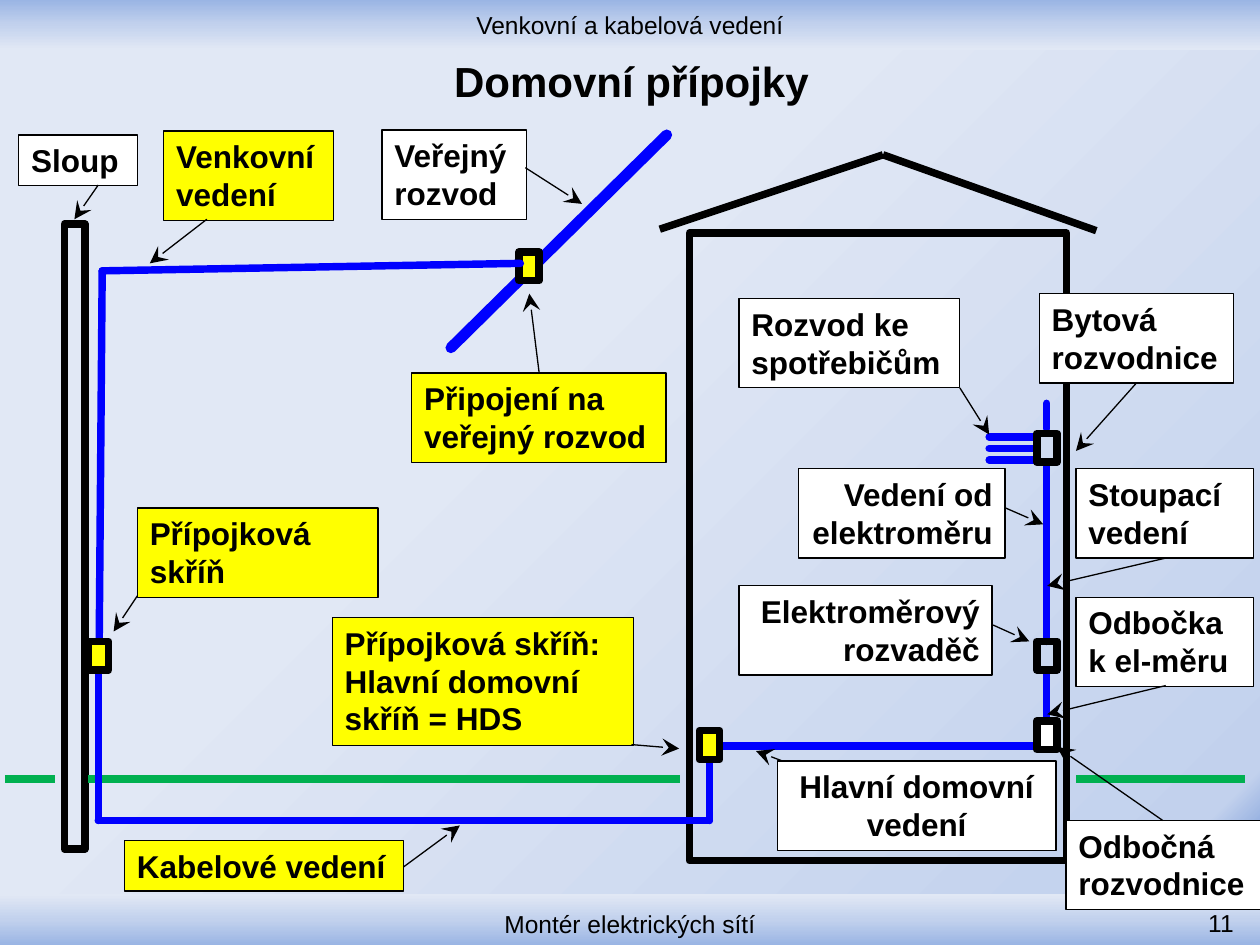
import pptx
import pptx.util
import pptx.oxml
import pptx.oxml.ns
from pptx.dml.color import RGBColor
from pptx.enum.shapes import MSO_CONNECTOR, MSO_SHAPE
from pptx.enum.text import MSO_ANCHOR, MSO_AUTO_SIZE, PP_ALIGN
from pptx.util import Cm, Pt

BLACK = RGBColor(0x00, 0x00, 0x00)
WHITE = RGBColor(0xFF, 0xFF, 0xFF)
YELLOW = RGBColor(0xFF, 0xFF, 0x00)
BLUE = RGBColor(0x00, 0x00, 0xFF)
GREEN = RGBColor(0x00, 0xB0, 0x50)
SKY_DARK = RGBColor(0x34, 0x68, 0xC5)
SKY = RGBColor(0x9A, 0xB5, 0xE4)
SKY_LIGHT = RGBColor(0xC2, 0xD1, 0xED)
SKY_PALE = RGBColor(0xE1, 0xE8, 0xF5)

LEFT, CENTER, RIGHT = PP_ALIGN.LEFT, PP_ALIGN.CENTER, PP_ALIGN.RIGHT

# Text, left, top, width, lines, fill, alignment, arrow from, arrow to (cm)
LABELS = [
    ("Přípojková skříň", 2.77, 10.24, 4.85, 2, YELLOW, LEFT, (2.77, 12.01), (2.29, 12.73)),
    ("Přípojková skříň: Hlavní domovní skříň = HDS", 6.7, 12.45, 6.07, 3, YELLOW, LEFT,
     (12.73, 15.01), (13.69, 15.09)),
    ("Venkovní vedení", 3.3, 2.64, 3.43, 2, YELLOW, LEFT, (4.17, 4.42), (3.02, 5.31)),
    ("Sloup", 0.38, 2.72, 2.39, 1, WHITE, LEFT, (1.98, 3.73), (1.5, 4.42)),
    ("Elektroměrový rozvaděč", 14.9, 11.81, 5.1, 2, WHITE, RIGHT, (20.02, 12.6), (20.75, 12.93)),
    ("Rozvod ke spotřebičům", 14.9, 6.02, 4.45, 2, WHITE, LEFT, (19.35, 7.82), (19.94, 8.76)),
    ("Hlavní domovní vedení", 15.67, 15.34, 5.62, 2, WHITE, CENTER,
     (15.77, 15.34), (15.24, 15.14)),
    ("Bytová rozvodnice", 20.95, 5.92, 3.92, 2, WHITE, LEFT, (22.91, 7.72), (21.69, 9.09)),
    ("Kabelové vedení", 2.51, 16.94, 5.62, 1, YELLOW, LEFT, (8.13, 17.48), (9.27, 16.64)),
    ("Vedení od elektroměru", 16.1, 9.45, 4.16, 2, WHITE, RIGHT, (20.27, 10.24), (21.03, 10.57)),
    ("Veřejný\nrozvod", 7.7, 2.62, 2.92, 2, WHITE, LEFT, (10.59, 3.38), (11.73, 4.11)),
    ("Stoupací vedení", 21.69, 9.45, 3.58, 2, WHITE, LEFT, (23.5, 11.25), (21.11, 11.81)),
    ("Odbočka k el-měru", 21.69, 12.04, 3.58, 2, WHITE, LEFT, (23.5, 13.82), (21.11, 14.4)),
    ("Odbočná rozvodnice", 21.49, 16.54, 3.92, 2, WHITE, LEFT, (23.44, 16.54), (21.31, 15.06)),
    ("Připojení na veřejný rozvod", 8.3, 7.52, 5.13, 2, YELLOW, LEFT,
     (10.87, 7.52), (10.67, 5.92)),
]

# Cable runs, each from one point to the next
CABLES = [
    [(1.98, 13.51), (1.98, 16.54), (14.3, 16.54), (14.3, 15.32)],  # underground cable
    [(14.5, 15.04), (21.1, 15.04), (21.1, 13.51)],                 # main house line
    [(2.06, 5.46), (2, 12.93)],                                    # down the pole
    [(21.1, 9.32), (21.1, 12.93)],                                 # riser
    [(21.1, 8.64), (21.1, 8.13)],
]

# Junction boxes: left, top, fill
BOXES = [
    (1.78, 12.93, YELLOW), (14.1, 14.73, YELLOW), (20.9, 12.93, None),
    (20.9, 8.74, None), (20.9, 14.53, WHITE), (10.46, 5.08, YELLOW),
]


def gradient(parent, stops, direction):
    """Replace the empty fill of parent by a gradient of (position, colour, alpha)."""
    gs = "".join(
        f'<a:gs pos="{pos * 1000}"><a:srgbClr val="{color}">'
        f'<a:alpha val="{alpha * 1000}"/></a:srgbClr></a:gs>'
        for pos, color, alpha in stops)
    fill = pptx.oxml.parse_xml(
        f'<a:gradFill {pptx.oxml.ns.nsdecls("a")} rotWithShape="1">'
        f'<a:gsLst>{gs}</a:gsLst>{direction}</a:gradFill>')
    parent.replace(parent.find(pptx.oxml.ns.qn("a:noFill")), fill)


def add_background(s):
    s.background.fill.background()
    bg = s.element.find(".//" + pptx.oxml.ns.qn("p:bgPr"))
    gradient(bg, [(0, SKY_DARK, 12), (8, SKY_LIGHT, 33), (60, SKY_PALE, 74)],
             '<a:path path="circle"><a:fillToRect l="100000" t="100000"/></a:path>')


def write(sp, text, size, align, anchor, bold=False):
    tf = sp.text_frame
    tf.word_wrap = True
    tf.vertical_anchor = anchor
    tf.text = text
    for p in tf.paragraphs:
        p.alignment = align
        p.font.name = "Arial"
        p.font.size = Pt(size)
        p.font.bold = bold
        p.font.color.rgb = BLACK


def add_rect(s, x, y, w, h, fill=None, line=None):
    sp = s.shapes.add_shape(MSO_SHAPE.RECTANGLE, Cm(x), Cm(y), Cm(w), Cm(h))
    sp.shadow.inherit = False
    if fill is None:
        sp.fill.background()
    else:
        sp.fill.solid()
        sp.fill.fore_color.rgb = fill
    if line is None:
        sp.line.fill.background()
    else:
        sp.line.color.rgb = BLACK
        sp.line.width = Pt(line)
    return sp


def add_band(s, y, h, text, angle, anchor):
    sp = add_rect(s, 0, y, 25.4, h)
    gradient(sp.element.spPr, [(0, SKY, 100), (50, SKY_LIGHT, 100), (100, SKY_PALE, 100)],
             f'<a:lin ang="{angle * 60000}" scaled="0"/>')
    write(sp, text, 14, CENTER, anchor)


def add_line(s, start, end, color, width=4.25, arrow=False):
    c = s.shapes.add_connector(MSO_CONNECTOR.STRAIGHT, *map(Cm, start + end))
    c.line.color.rgb = color
    c.line.width = Pt(width)
    ln = c.line._get_or_add_ln()
    if color == BLUE:
        ln.set("cap", "rnd")
    ns = pptx.oxml.ns.nsdecls("a")
    if arrow:
        ln.append(pptx.oxml.parse_xml(f'<a:tailEnd {ns} type="stealth" w="lg" len="lg"/>'))
    c.element.spPr.append(pptx.oxml.parse_xml(f"<a:effectLst {ns}/>"))


def add_label(s, text, x, y, w, lines, fill, align, start, end):
    sp = add_rect(s, x, y, w, 0.25 + 0.775 * lines, fill, 0.75)
    write(sp, text, 18, align, MSO_ANCHOR.TOP, bold=True)
    sp.text_frame.auto_size = MSO_AUTO_SIZE.SHAPE_TO_FIT_TEXT
    add_line(s, start, end, BLACK, 0.75, arrow=True)


def add_title(s, text):
    sp = s.shapes.title
    sp.left, sp.top, sp.width, sp.height = Cm(1.3), Cm(1), Cm(22.86), Cm(1.27)
    write(sp, text, 24, CENTER, MSO_ANCHOR.MIDDLE, bold=True)
    pPr = sp.text_frame.paragraphs[0]._p.get_or_add_pPr()
    pPr.set("marL", str(Cm(1.27)))
    pPr.set("indent", str(-Cm(1.27)))


def main():
    prs = pptx.Presentation()
    prs.slide_width, prs.slide_height = Cm(25.4), Cm(19.05)
    s = prs.slides.add_slide(prs.slide_layouts[5])
    add_background(s)

    # Header, title, footer and page number
    add_band(s, 0, 1, "Venkovní a kabelová vedení", 90, MSO_ANCHOR.MIDDLE)
    add_title(s, "Domovní přípojky")
    add_band(s, 18.03, 1.02, "Montér elektrických sítí", 270, MSO_ANCHOR.BOTTOM)
    number = s.shapes.add_textbox(Cm(23.7), Cm(18.01), Cm(1.42), Cm(1.02))
    write(number, "11", 14, RIGHT, MSO_ANCHOR.BOTTOM)

    # Pole, house, roof and ground
    add_rect(s, 1.3, 4.52, 0.41, 12.6, line=4.33)
    add_rect(s, 13.9, 4.7, 7.6, 12.65, line=4.33)
    for eave in [(13.3, 4.62), (22.1, 4.65)]:
        add_line(s, eave, (17.8, 3.12), BLACK)
    for x1, x2 in [(1.78, 13.7), (0.1, 1.1), (21.7, 25.1)]:
        add_line(s, (x1, 15.7), (x2, 15.7), GREEN)

    # Cables, appliance circuits and public line
    for run in CABLES:
        for start, end in zip(run, run[1:]):
            add_line(s, start, end, BLUE)
    for i in range(3):
        y = 8.81 + 0.23 * i
        add_line(s, (19.94, y), (20.9, y), BLUE)
    add_line(s, (13.44, 2.72), (9.09, 7.01), BLUE, 6.25)

    # Labels with their arrows, then boxes and the overhead line on top
    for label in LABELS:
        add_label(s, *label)
    for x, y, fill in BOXES:
        add_rect(s, x, y, 0.41, 0.58, fill, 4.33)
    add_line(s, (2.06, 5.46), (10.49, 5.31), BLUE)

    prs.save("out.pptx")


if __name__ == "__main__":
    main()
